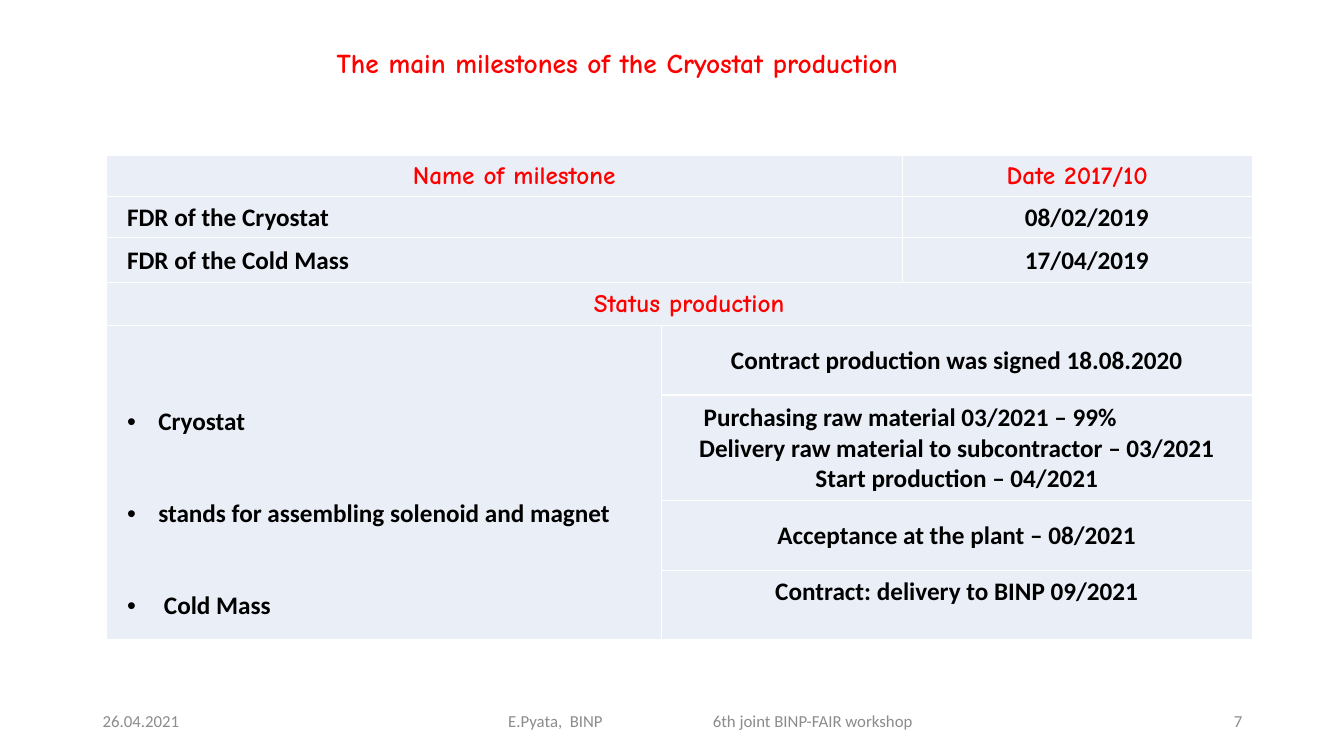
from dataclasses import dataclass

import pptx
import pptx.dml.color
import pptx.enum.text
import pptx.oxml
import pptx.oxml.ns
import pptx.util

Inches = pptx.util.Inches
Pt = pptx.util.Pt
ALIGN = pptx.enum.text.PP_ALIGN
ANCHOR = pptx.enum.text.MSO_ANCHOR
BODY_FONT, TITLE_FONT = "Calibri", "Comic Neue"
RED, BLACK, GREY, WHITE, CELL_FILL = "FF0000", "000000", "8C8C8C", "FFFFFF", "EAEFF7"
NAMESPACE = pptx.oxml.ns.nsdecls("a")


@dataclass
class Style:
    size: float
    font: str
    color: str
    bold: bool = True


@dataclass
class Line:
    text: str
    align: ALIGN = ALIGN.CENTER
    indent: float = 0
    bullet: bool = False
    spacing: float | None = None
    tab: float | None = None


@dataclass
class Label:
    left: float
    top: float
    width: float
    line: Line
    style: Style
    anchor: ANCHOR = ANCHOR.MIDDLE
    left_inset: float = 0.1


@dataclass
class Cell:
    row: int
    column: int
    rows: int
    columns: int
    lines: list[Line]
    style: Style
    left_inset: float = 0.01
    bottom_inset: float = 0


HEADING = Style(18, TITLE_FONT, RED)
BODY = Style(18, BODY_FONT, BLACK)
TITLE = Style(19.5, TITLE_FONT, RED)
FOOTER = Style(12, BODY_FONT, GREY, False)

LABELS = [
    Label(0.92, 6.95, 3, Line("26.04.2021", ALIGN.LEFT), FOOTER),
    Label(2.89, 6.95, 8.32,
          Line("E.Pyata,  BINP\t6th joint BINP-FAIR workshop", ALIGN.LEFT, tab=2.03),
          FOOTER, left_inset=2.15),
    Label(9.42, 6.95, 3, Line("7", ALIGN.RIGHT), FOOTER),
    Label(1.48, 0.47, 9.29,
          Line("The main milestones of the Cryostat production", spacing=0.8),
          TITLE, ANCHOR.TOP),
]

COLUMN_WIDTHS = [5.5, 2.39, 3.47]
ROW_HEIGHTS = [0.41, 0.41, 0.44, 0.43, 0.69, 1.05, 0.69, 0.69]
PRODUCTS = ["Cryostat", "stands for assembling solenoid and magnet", " Cold Mass"]
CELLS = [
    Cell(0, 0, 1, 2, [Line("Name of milestone")], HEADING, 0.2),
    Cell(0, 2, 1, 1, [Line("Date 2017/10")], HEADING),
    Cell(1, 0, 1, 2, [Line("FDR of the Cryostat", ALIGN.LEFT)], BODY, 0.2),
    Cell(1, 2, 1, 1, [Line("08/02/2019")], BODY, 0.2),
    Cell(2, 0, 1, 2, [Line("FDR of the Cold Mass", ALIGN.LEFT)], BODY, 0.2),
    Cell(2, 2, 1, 1, [Line("17/04/2019")], BODY, 0.2),
    Cell(3, 0, 1, 3, [Line("Status production")], HEADING, 0.2),
    Cell(4, 0, 4, 1,
         [Line(name, ALIGN.LEFT, 0.31, True, 3.0) for name in PRODUCTS], BODY, 0.2),
    Cell(4, 1, 1, 2, [Line("Contract production was signed 18.08.2020")], BODY),
    Cell(5, 1, 1, 2, [
        Line("Purchasing raw material 03/2021 – 99%", ALIGN.LEFT, 0.41),
        Line("Delivery raw material to subcontractor – 03/2021"),
        Line("Start production – 04/2021"),
    ], BODY),
    Cell(6, 1, 1, 2, [Line("Acceptance at the plant – 08/2021")], BODY),
    Cell(7, 1, 1, 2, [Line("Contract: delivery to BINP 09/2021")], BODY, bottom_inset=0.28),
]


def rgb(color: str) -> pptx.dml.color.RGBColor:
    return pptx.dml.color.RGBColor.from_string(color)


def write_lines(text_frame, lines: list[Line], style: Style) -> None:
    for index, line in enumerate(lines):
        paragraph = text_frame.paragraphs[0] if index == 0 else text_frame.add_paragraph()
        paragraph.alignment = line.align
        if line.spacing:
            paragraph.line_spacing = line.spacing
        run = paragraph.add_run()
        run.text = line.text
        run.font.size = Pt(style.size)
        run.font.name = style.font
        run.font.bold = style.bold
        run.font.color.rgb = rgb(style.color)

        # Indents, bullets and tab stops
        properties = paragraph._p.get_or_add_pPr()
        if line.indent:
            properties.set("marL", str(Inches(line.indent)))
        if line.bullet:
            properties.set("indent", str(-Inches(line.indent)))
            properties.append(pptx.oxml.parse_xml(
                f'<a:buFont {NAMESPACE} typeface="Arial"/>'))
            properties.append(pptx.oxml.parse_xml(f'<a:buChar {NAMESPACE} char="•"/>'))
        if line.tab:
            properties.append(pptx.oxml.parse_xml(
                f'<a:tabLst {NAMESPACE}><a:tab pos="{Inches(line.tab)}" algn="l"/></a:tabLst>'))


def add_label(slide, label: Label) -> None:
    shape = slide.shapes.add_textbox(
        Inches(label.left), Inches(label.top), Inches(label.width), Inches(0.4))
    text_frame = shape.text_frame
    text_frame.word_wrap = True
    text_frame.vertical_anchor = label.anchor
    text_frame.margin_left = Inches(label.left_inset)
    write_lines(text_frame, [label.line], label.style)


def format_cell(table_cell) -> None:
    properties = table_cell._tc.get_or_add_tcPr()
    for side in ("lnL", "lnR", "lnT", "lnB"):
        properties.append(pptx.oxml.parse_xml(
            f'<a:{side} {NAMESPACE} w="{Pt(1)}"><a:solidFill>'
            f'<a:srgbClr val="{WHITE}"/></a:solidFill></a:{side}>'))
    table_cell.fill.solid()
    table_cell.fill.fore_color.rgb = rgb(CELL_FILL)


def add_milestone_table(slide) -> None:
    table = slide.shapes.add_table(
        len(ROW_HEIGHTS), len(COLUMN_WIDTHS), Inches(1.06), Inches(1.54),
        Inches(sum(COLUMN_WIDTHS)), Inches(sum(ROW_HEIGHTS))).table
    table.first_row = False
    table.horz_banding = False
    for column, width in zip(table.columns, COLUMN_WIDTHS):
        column.width = Inches(width)
    for row, height in zip(table.rows, ROW_HEIGHTS):
        row.height = Inches(height)
    for table_cell in table.iter_cells():
        format_cell(table_cell)

    for cell in CELLS:
        table_cell = table.cell(cell.row, cell.column)
        if cell.rows * cell.columns > 1:
            table_cell.merge(table.cell(
                cell.row + cell.rows - 1, cell.column + cell.columns - 1))
        table_cell.vertical_anchor = ANCHOR.MIDDLE
        table_cell.margin_left = Inches(cell.left_inset)
        table_cell.margin_top = table_cell.margin_right = Inches(0.01)
        table_cell.margin_bottom = Inches(cell.bottom_inset)
        write_lines(table_cell.text_frame, cell.lines, cell.style)


def main() -> None:
    presentation = pptx.Presentation()
    presentation.slide_width = Inches(13.33)
    presentation.slide_height = Inches(7.5)
    slide = presentation.slides.add_slide(presentation.slide_layouts[6])

    # Title and footer
    for label in LABELS:
        add_label(slide, label)

    # Milestones and production status
    add_milestone_table(slide)
    presentation.save("out.pptx")


if __name__ == "__main__":
    main()
